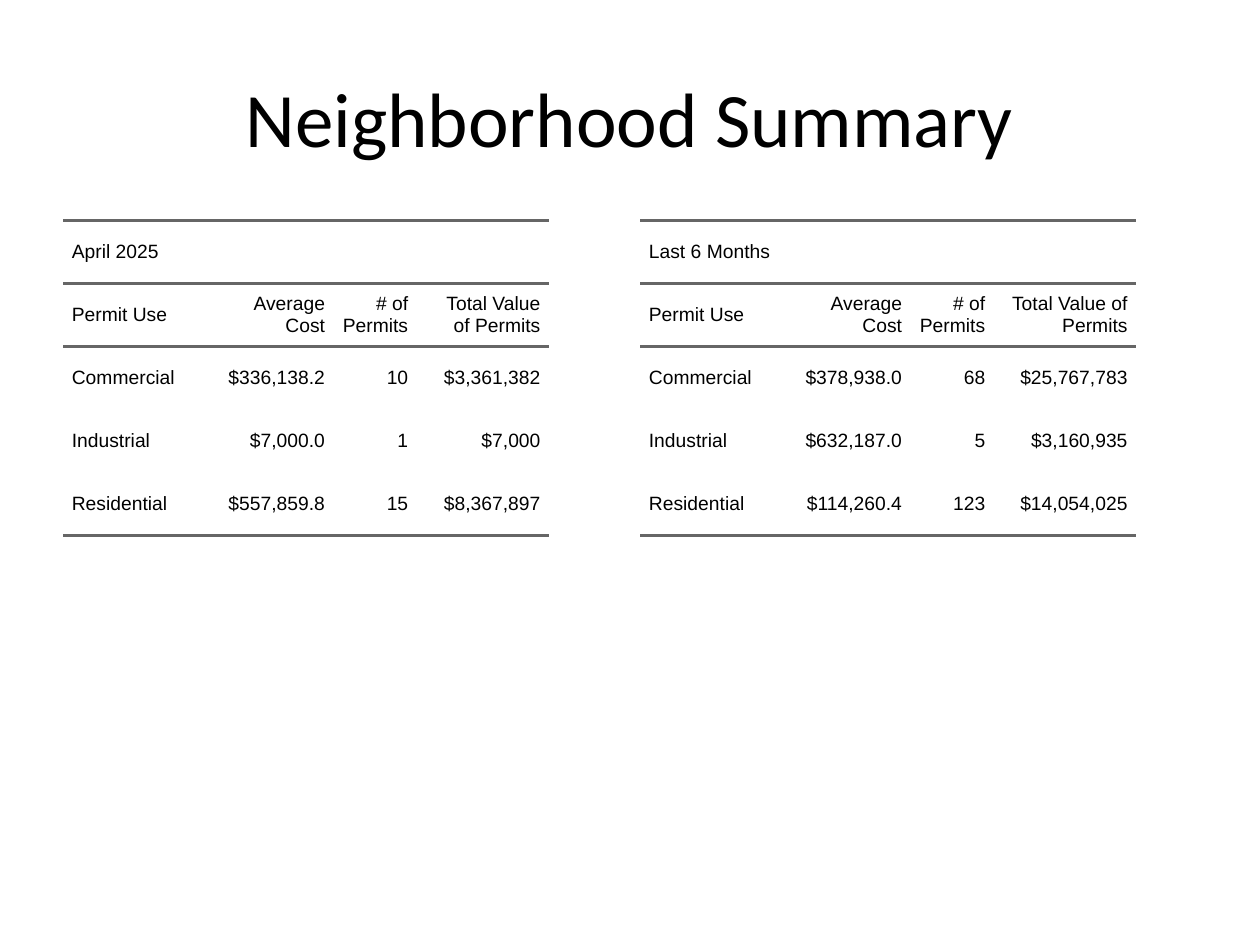
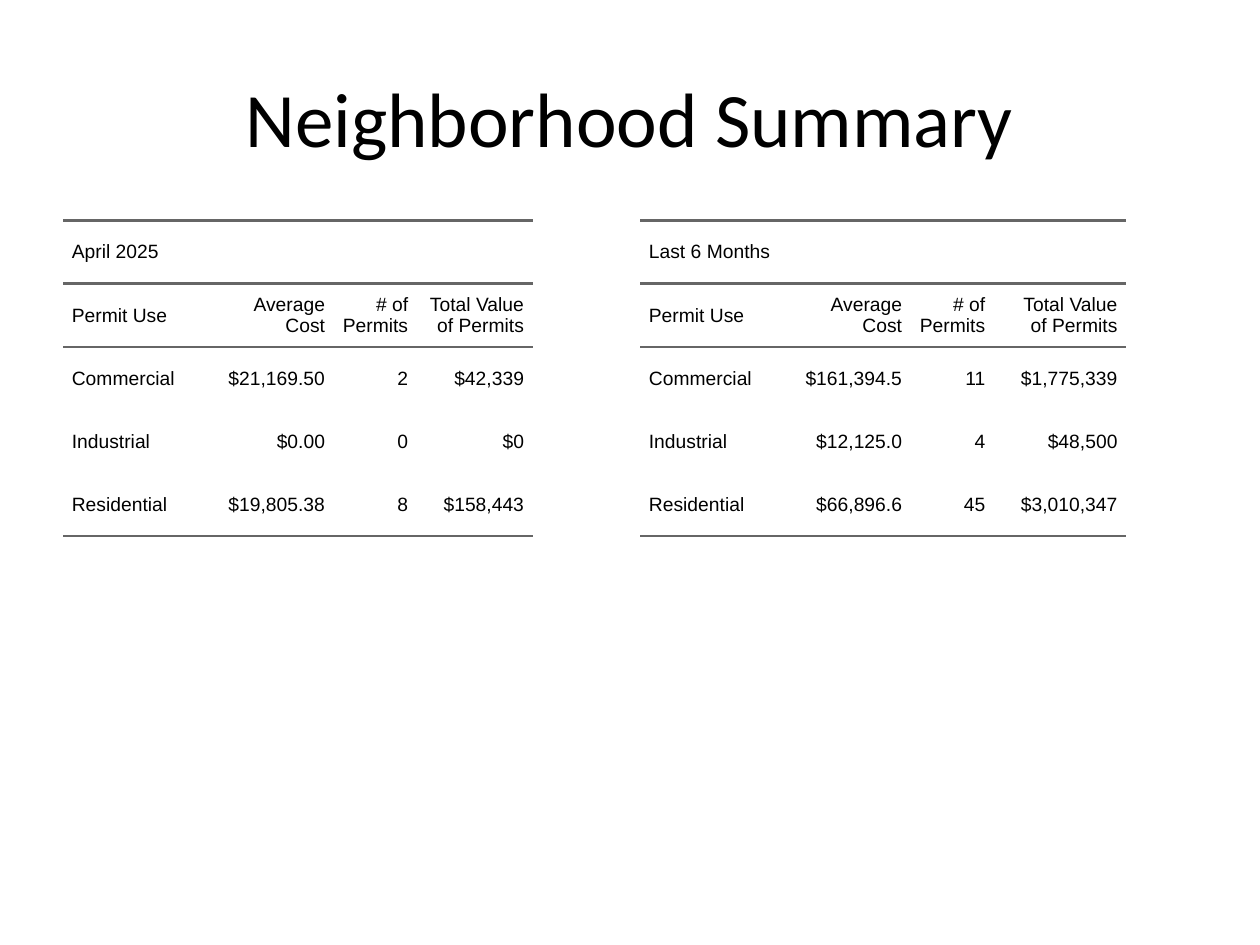
from lxml import etree
from pptx import Presentation
from pptx.dml.color import RGBColor
from pptx.enum.text import MSO_ANCHOR, PP_ALIGN
from pptx.oxml.ns import qn
from pptx.util import Inches, Pt

LEFT, CENTER, RIGHT = PP_ALIGN.LEFT, PP_ALIGN.CENTER, PP_ALIGN.RIGHT
MIDDLE = MSO_ANCHOR.MIDDLE

COLORS = {"text": "000000", "rule": "666666"}
TITLE_FONT = {"name": "Calibri", "size": Pt(44)}
CELL_FONT = {"name": "Arial", "size": Pt(11)}
CELL_SPACING = {"space_before": Pt(5), "space_after": Pt(5)}
PADDING = Inches(0.07)
CELL_BOX = {"margin_left": 0, "margin_right": 0, "margin_top": PADDING,
            "margin_bottom": PADDING, "vertical_anchor": MIDDLE}
NO_STYLE = "{2D5ABB26-0587-4C30-8999-92F81FD0307C}"

TITLE = "Neighborhood Summary"
HEADERS = ("Permit Use", "Average Cost", "# of Permits", "Total Value of Permits")
USES = ("Commercial", "Industrial", "Residential")
FIRST_COLS = (1.1, 1.05, 0.66)
ROW_HEIGHT = 0.5
PERIODS = (("April 2025", 0.5), ("Last 6 Months", 5.08))

# Per slide and period: width of the last column, then cost, count, total by use
SLIDES = (
    (
        (1.05, (("$336,138.2", "10", "$3,361,382"),
                ("$7,000.0", "1", "$7,000"),
                ("$557,859.8", "15", "$8,367,897"))),
        (1.13, (("$378,938.0", "68", "$25,767,783"),
                ("$632,187.0", "5", "$3,160,935"),
                ("$114,260.4", "123", "$14,054,025"))),
    ),
    (
        (0.92, (("$21,169.50", "2", "$42,339"),
                ("$0.00", "0", "$0"),
                ("$19,805.38", "8", "$158,443"))),
        (1.05, (("$161,394.5", "11", "$1,775,339"),
                ("$12,125.0", "4", "$48,500"),
                ("$66,896.6", "45", "$3,010,347"))),
    ),
)


def apply(target, values):
    for name, value in values.items():
        setattr(target, name, value)


class Deck:
    def __init__(self):
        self.prs = Presentation()
        self.prs.slide_width, self.prs.slide_height = Inches(10), Inches(7.5)
        self.s = None

    def slide(self):
        self.s = self.prs.slides.add_slide(self.prs.slide_layouts[6])

    def add_text(self, tf, text, font, align):
        p = tf.paragraphs[0]
        p.alignment = align
        r = p.add_run()
        r.text = text
        apply(r.font, font)
        r.font.color.rgb = RGBColor.from_string(COLORS["text"])
        return p

    def title(self, text):
        sp = self.s.shapes.add_textbox(Inches(0.5), Inches(0.3), Inches(9), Inches(1.25))
        tf = sp.text_frame
        apply(tf, {"word_wrap": True, "vertical_anchor": MIDDLE})
        self.add_text(tf, text, TITLE_FONT, CENTER)

    def rule(self, cell, side):
        ln = etree.SubElement(cell._tc.get_or_add_tcPr(), qn(f"a:{side}"), w=str(Pt(1.5)))
        fill = etree.SubElement(ln, qn("a:solidFill"))
        etree.SubElement(fill, qn("a:srgbClr"), val=COLORS["rule"])

    def cell(self, cell, text, align, sides):
        apply(cell, CELL_BOX)
        for side in sides:
            self.rule(cell, side)
        cell.fill.background()
        if text:
            p = self.add_text(cell.text_frame, text, CELL_FONT, align)
            apply(p, CELL_SPACING)
            for indent in ("marL", "marR"):
                p._p.get_or_add_pPr().set(indent, str(PADDING))

    def permit_table(self, period, left, last_col, values):
        rows = [(period, "", "", ""), HEADERS]
        rows += [(use, *figures) for use, figures in zip(USES, values)]
        widths = (*FIRST_COLS, last_col)
        frame = self.s.shapes.add_table(
            len(rows), len(widths), Inches(left), Inches(1.75),
            Inches(sum(widths)), Inches(ROW_HEIGHT * len(rows)))
        table = frame.table
        apply(table, {"first_row": False, "horz_banding": False})
        table._tbl.tblPr.find(qn("a:tableStyleId")).text = NO_STYLE
        for column, width in zip(table.columns, widths):
            column.width = Inches(width)

        # Rules enclose the two heading rows and close the table
        for i, row in enumerate(rows):
            table.rows[i].height = Inches(ROW_HEIGHT)
            sides = ("lnT", "lnB") if i < 2 else ("lnB",) if i == len(rows) - 1 else ()
            for j, text in enumerate(row):
                self.cell(table.cell(i, j), text, RIGHT if j else LEFT, sides)
        table.cell(0, 0).merge(table.cell(0, len(widths) - 1))


def main():
    deck = Deck()
    for tables in SLIDES:
        deck.slide()
        for (period, left), (last_col, values) in zip(PERIODS, tables):
            deck.permit_table(period, left, last_col, values)
        deck.title(TITLE)
    deck.prs.save("out.pptx")


if __name__ == "__main__":
    main()
